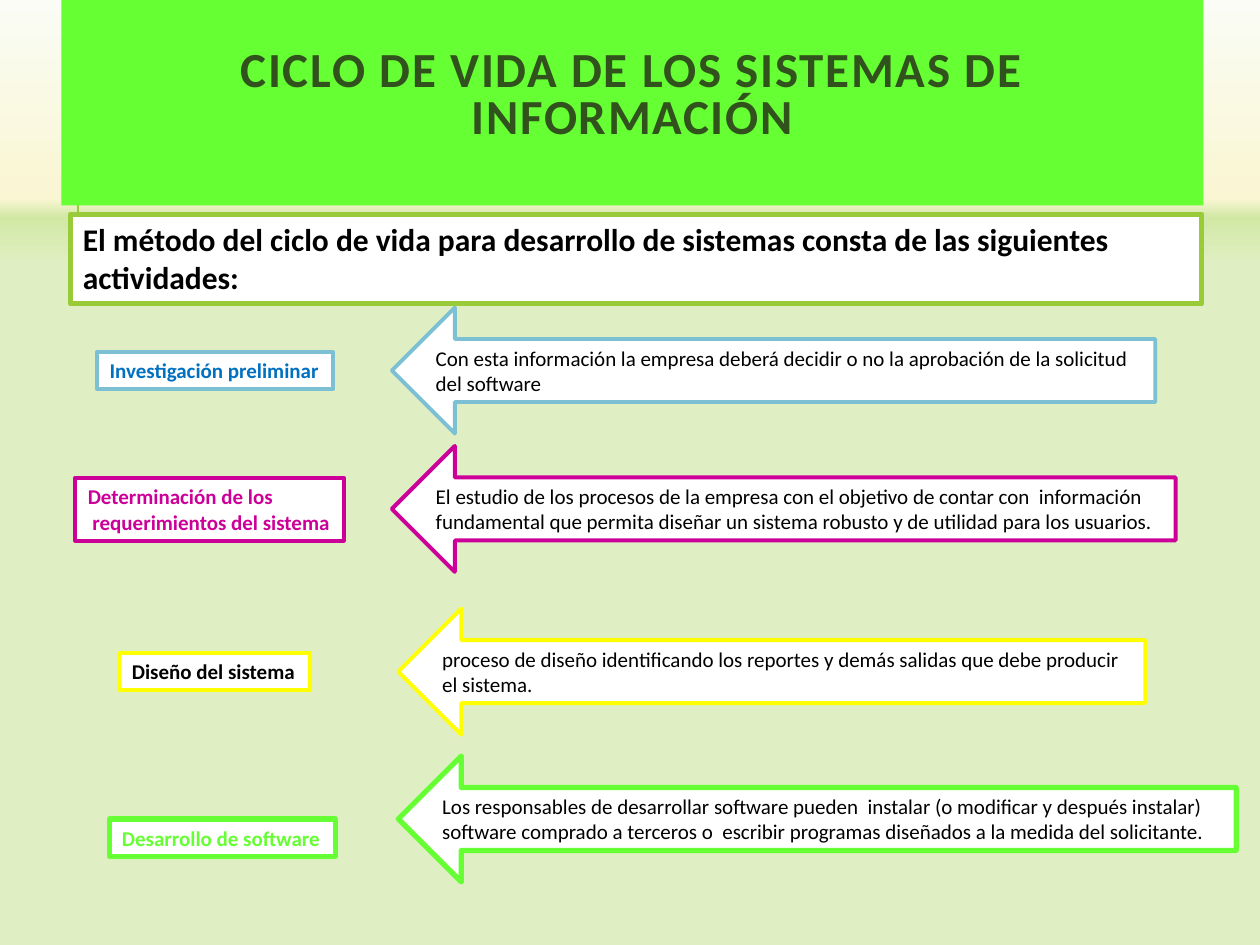
from dataclasses import dataclass

from lxml.etree import SubElement
from pptx import Presentation
from pptx.dml.color import RGBColor
from pptx.enum.shapes import MSO_CONNECTOR, MSO_SHAPE as Preset
from pptx.enum.text import MSO_ANCHOR as Anchor, PP_ALIGN as Align
from pptx.oxml.ns import qn
from pptx.util import Cm, Pt

FONT = "Calibri"
BLACK = RGBColor(0x00, 0x00, 0x00)
WHITE = RGBColor(0xFF, 0xFF, 0xFF)
DARK_GREEN = RGBColor(0x31, 0x52, 0x1C)
LIME = RGBColor(0x66, 0xFF, 0x33)
OLIVE = RGBColor(0x99, 0xCB, 0x38)
SKY = RGBColor(0x7D, 0xC0, 0xD4)
BLUE = RGBColor(0x00, 0x70, 0xC0)
MAGENTA = RGBColor(0xCC, 0x00, 0x99)
YELLOW = RGBColor(0xFF, 0xFF, 0x00)
BACKGROUND_STOPS = (
    (0, RGBColor(0xFA, 0xFC, 0xF5)),
    (21, RGBColor(0xFA, 0xF6, 0xD3)),
    (23, RGBColor(0xD1, 0xE8, 0xA5)),
    (28, RGBColor(0xE0, 0xEF, 0xC3)),
)
ARROW_HEIGHT = 2.54


@dataclass(frozen=True)
class Box:
    """Position and size in centimetres."""
    left: float
    top: float
    width: float
    height: float


@dataclass(frozen=True)
class Activity:
    label: str
    label_box: Box
    label_color: RGBColor
    description: str
    arrow_box: Box
    line_color: RGBColor
    line_width: float = 2.25


ACTIVITIES = (
    Activity("Investigación preliminar", Box(1.96, 7.09, 4.75, 0.76), BLUE,
             "Con esta información la empresa deberá decidir o no la "
             "aprobación de la solicitud\ndel software",
             Box(7.9, 6.2, 15.39, ARROW_HEIGHT), SKY),
    Activity("Determinación de los\n requerimientos del sistema",
             Box(1.52, 9.63, 5.41, 1.27), MAGENTA,
             "El estudio de los procesos de la empresa con el objetivo de "
             "contar con  información fundamental que permita diseñar un "
             "sistema robusto y de utilidad para los usuarios.",
             Box(7.9, 8.99, 15.8, ARROW_HEIGHT), MAGENTA),
    Activity("Diseño del sistema", Box(2.41, 13.16, 3.84, 0.76), BLACK,
             "proceso de diseño identificando los reportes y demás salidas "
             "que debe producir el sistema.",
             Box(8.03, 12.27, 15.06, ARROW_HEIGHT), YELLOW),
    Activity("Desarrollo de software", Box(2.21, 16.51, 4.55, 0.76), LIME,
             "Los responsables de desarrollar software pueden  instalar (o "
             "modificar y después instalar) software comprado a terceros o  "
             "escribir programas diseñados a la medida del solicitante.",
             Box(8.03, 15.24, 16.89, ARROW_HEIGHT), LIME, 3),
)


def paint_background(slide) -> None:
    fill = slide.background.fill
    fill.gradient()
    gradient = slide.background._cSld.find(".//" + qn("a:gradFill"))
    stops = gradient.find(qn("a:gsLst"))
    for stop in list(stops):
        stops.remove(stop)
    for percent, color in BACKGROUND_STOPS:
        stop = SubElement(stops, qn("a:gs"), pos=str(percent * 1000))
        SubElement(stop, qn("a:srgbClr"), val=str(color))
    gradient.find(qn("a:lin")).set("ang", "5400000")


def add_box(slide, preset: Preset, box: Box, text: str, size: float,
            color: RGBColor, fill: RGBColor = WHITE,
            line: RGBColor | None = None, line_width: float = 2.25,
            bold: bool = False, wrap: bool = True):
    shape = slide.shapes.add_shape(preset, Cm(box.left), Cm(box.top),
                                   Cm(box.width), Cm(box.height))
    shape.shadow.inherit = False
    shape.fill.solid()
    shape.fill.fore_color.rgb = fill
    if line is None:
        shape.line.fill.background()
    else:
        shape.line.color.rgb = line
        shape.line.width = Pt(line_width)

    frame = shape.text_frame
    frame.text = text
    frame.word_wrap = wrap
    frame.vertical_anchor = Anchor.TOP
    for paragraph in frame.paragraphs:
        paragraph.alignment = Align.LEFT
        font = paragraph.font
        font.name, font.size, font.bold = FONT, Pt(size), bold
        font.color.rgb = color
    return shape


def add_title(slide) -> None:
    title = add_box(slide, Preset.RECTANGLE, Box(1.24, -0.23, 23.02, 4.37),
                    "CICLO DE VIDA DE LOS SISTEMAS DE INFORMACIÓN",
                    28, DARK_GREEN, fill=LIME, bold=True)
    frame = title.text_frame
    frame.vertical_anchor = Anchor.MIDDLE
    frame.margin_left = frame.margin_right = Cm(1)
    paragraph = frame.paragraphs[0]
    paragraph.alignment = Align.CENTER
    paragraph.line_spacing = 0.8
    paragraph.runs[0].font._element.set("spc", "100")


def add_accent_line(slide) -> None:
    line = slide.shapes.add_connector(MSO_CONNECTOR.STRAIGHT, Cm(1.57),
                                      Cm(4.83), Cm(1.57), Cm(2.29))
    line.line.color.rgb = OLIVE
    line.line.width = Pt(1.5)
    SubElement(line._element.spPr, qn("a:effectLst"))


def main() -> None:
    presentation = Presentation()
    presentation.slide_width, presentation.slide_height = Cm(25.4), Cm(19.05)
    slide = presentation.slides.add_slide(presentation.slide_layouts[6])

    # Background and heading
    paint_background(slide)
    add_accent_line(slide)
    add_title(slide)
    add_box(slide, Preset.RECTANGLE, Box(1.42, 4.32, 22.81, 1.8),
            "El método del ciclo de vida para desarrollo de sistemas consta "
            "de las siguientes\nactividades:",
            18, BLACK, line=OLIVE, line_width=3, bold=True)

    # Activities: a label and an arrow pointing at it
    for activity in ACTIVITIES:
        add_box(slide, Preset.RECTANGLE, activity.label_box, activity.label,
                12, activity.label_color, line=activity.line_color,
                line_width=activity.line_width, bold=True, wrap=False)
        add_box(slide, Preset.LEFT_ARROW, activity.arrow_box,
                activity.description, 12, BLACK, line=activity.line_color,
                line_width=activity.line_width)

    presentation.save("out.pptx")


if __name__ == "__main__":
    main()
